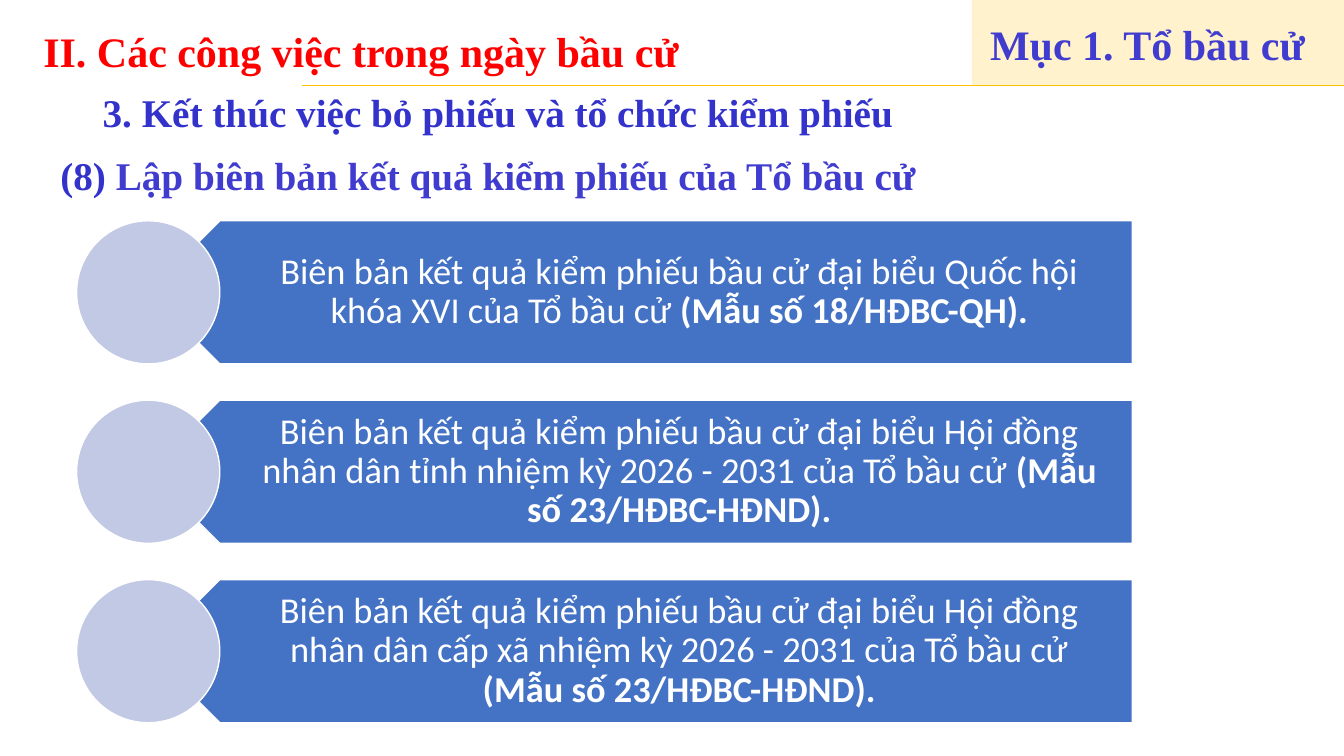
from lxml.etree import SubElement
from pptx import Presentation
from pptx.dml.color import RGBColor
from pptx.enum.shapes import MSO_CONNECTOR, MSO_SHAPE
from pptx.enum.text import MSO_ANCHOR, MSO_AUTO_SIZE, PP_ALIGN
from pptx.oxml.ns import qn
from pptx.util import Inches, Pt

COLORS = {
    "red": "FF0000",
    "cream": "FFF2CC",
    "gold": "FFC000",
    "violet": "403CCF",
    "blue": "3333CC",
    "arrow": "4472C4",
    "circle": "C1C9E4",
    "white": "FFFFFF",
}
SERIF = "Times New Roman"
FORMS = [
    ("Biên bản kết quả kiểm phiếu bầu cử đại biểu Quốc hội khóa XVI của Tổ bầu cử ",
     "(Mẫu số 18/HĐBC-QH)."),
    ("Biên bản kết quả kiểm phiếu bầu cử đại biểu Hội đồng nhân dân tỉnh nhiệm kỳ 2026 - 2031 của Tổ bầu cử ",
     "(Mẫu số 23/HĐBC-HĐND)."),
    ("Biên bản kết quả kiểm phiếu bầu cử đại biểu Hội đồng nhân dân cấp xã nhiệm kỳ 2026 - 2031 của Tổ bầu cử ",
     "(Mẫu số 23/HĐBC-HĐND)."),
]


def color(name):
    return RGBColor.from_string(COLORS[name])


def apply_format(target, values):
    for name, value in values.items():
        setattr(target, name, value)


def place(shape, left, top, width, height):
    apply_format(shape, {"left": Inches(left), "top": Inches(top),
                         "width": Inches(width), "height": Inches(height)})


def add_run(paragraph, text, size, font_name, color_name, bold):
    run = paragraph.add_run()
    run.text = text
    apply_format(run.font, {"size": Pt(size), "name": font_name, "bold": bold})
    run.font.color.rgb = color(color_name)


def add_text(slide, left, top, width, height, frame_format, paragraph_format):
    box = slide.shapes.add_textbox(Inches(left), Inches(top), Inches(width), Inches(height))
    apply_format(box.text_frame, frame_format)
    paragraph = box.text_frame.paragraphs[0]
    apply_format(paragraph, paragraph_format)
    return paragraph


def add_shape(slide, kind, left, top, width, height, fill, outline=None):
    shape = slide.shapes.add_shape(kind, Inches(left), Inches(top), Inches(width), Inches(height))
    shape.shadow.inherit = False
    shape.fill.solid()
    shape.fill.fore_color.rgb = color(fill)
    if outline:
        shape.line.color.rgb = color(outline)
        shape.line.width = Pt(1)
    else:
        shape.line.fill.background()
    return shape


def add_header(slide, left, top, width, height):
    title = slide.shapes.title
    place(title, left + 0.33, top, 12.8, 1)
    apply_format(title.text_frame, {"vertical_anchor": MSO_ANCHOR.MIDDLE, "word_wrap": True,
                                    "auto_size": MSO_AUTO_SIZE.NONE})
    paragraph = title.text_frame.paragraphs[0]
    paragraph.alignment = PP_ALIGN.LEFT
    add_run(paragraph, "II. Các công việc trong ngày bầu cử", 30, SERIF, "red", True)

    right, bottom = left + width, top + height
    add_shape(slide, MSO_SHAPE.RECTANGLE, right - 3.69, top, 3.69, height, "cream")
    rule = slide.shapes.add_connector(MSO_CONNECTOR.STRAIGHT, Inches(right), Inches(bottom),
                                      Inches(left + 3), Inches(bottom))
    rule.line.color.rgb = color("gold")
    rule.line.width = Pt(0.5)
    SubElement(rule.line._get_or_add_ln().getparent(), qn("a:effectLst"))

    margins = dict.fromkeys(("margin_left", "margin_top", "margin_right", "margin_bottom"), 0)
    paragraph = add_text(slide, right - 3.51, top + 0.24, 3.51, 0.41,
                         {"word_wrap": False, **margins}, {"line_spacing": Pt(32.1)})
    add_run(paragraph, "Mục 1. Tổ bầu cử", 30, SERIF, "violet", True)


def add_headings(slide, left, top):
    headings = [
        (0.42, 0, 8.13, 0.66, [("3. Kết thúc việc bỏ phiếu và tổ chức kiểm phiếu", "blue")]),
        (0, 0.62, 8.78, 0.72, [("(8) ", "blue"),
                               ("Lập biên bản kết quả kiểm phiếu của Tổ bầu cử", "violet")]),
    ]
    for indent, offset, width, height, runs in headings:
        paragraph = add_text(slide, left + indent, top + offset, width, height,
                             {"word_wrap": False, "auto_size": MSO_AUTO_SIZE.SHAPE_TO_FIT_TEXT},
                             {"line_spacing": Pt(43.8)})
        for text, color_name in runs:
            add_run(paragraph, text, 28, SERIF, color_name, True)


def add_form_row(slide, left, top, width, height, description, form_number):
    radius = height / 2
    arrow = add_shape(slide, MSO_SHAPE.PENTAGON, left + radius, top, width - radius, height,
                      "arrow", "white")
    arrow.rotation = 180
    text_left = 1.06
    paragraph = add_text(
        slide, left + text_left, top, width - text_left, height,
        {"word_wrap": True, "vertical_anchor": MSO_ANCHOR.MIDDLE,
         "margin_left": Inches(0.63), "margin_right": Inches(0.2),
         "margin_top": Inches(0.11), "margin_bottom": Inches(0.11)},
        {"alignment": PP_ALIGN.CENTER, "line_spacing": 0.9, "space_after": Pt(9)})
    add_run(paragraph, description, 26, "Calibri", "white", False)
    add_run(paragraph, form_number, 26, "Calibri", "white", True)
    add_shape(slide, MSO_SHAPE.OVAL, left, top, height, height, "circle", "white")


def add_form_list(slide, left, top, width, row_height, pitch):
    for index, (description, form_number) in enumerate(FORMS):
        add_form_row(slide, left, top + index * pitch, width, row_height,
                     description, form_number)


def main():
    presentation = Presentation()
    apply_format(presentation, {"slide_width": Inches(13.33), "slide_height": Inches(7.5)})
    slide = presentation.slides.add_slide(presentation.slide_layouts[5])
    add_header(slide, 0, 0, 13.33, 0.85)
    add_headings(slide, 0.5, 0.69)
    add_form_list(slide, 0.76, 2.19, 10.47, 1.42, 1.78)
    presentation.save("out.pptx")


if __name__ == "__main__":
    main()
